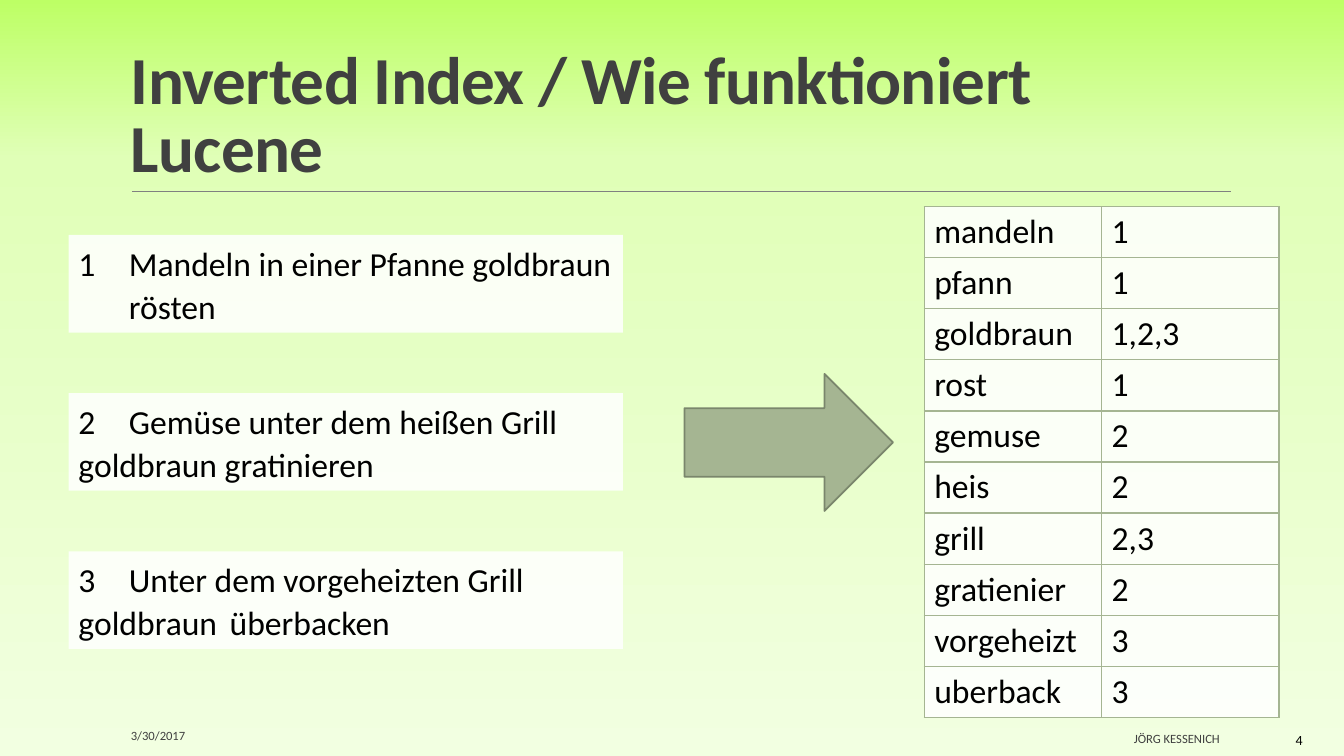
from copy import deepcopy

from lxml.etree import SubElement
from pptx import Presentation
from pptx.dml.color import RGBColor as RGB
from pptx.enum.shapes import MSO_CONNECTOR as CONN, MSO_SHAPE as SHAPE
from pptx.enum.text import MSO_ANCHOR as ANCHOR, MSO_AUTO_SIZE as AUTO, PP_ALIGN as ALIGN
from pptx.oxml.ns import qn
from pptx.util import Pt

THEME = {
    "font": "Calibri",
    "ink": "000000", "gray": "404040", "rule": "808080",
    "panel": "FFFFFF", "sage": "A5B592", "sage_dark": "7A866C",
    "panel_alpha": 86,
    "background": [(0, "F2FFE1"), (0.79, "E0FFB7"), (1, "BDFF65")],
    "title": 48, "body": 24, "footer": 9, "number": 10,
}


def write(tf, text, size, color, bold=False, **paragraph_format):
    tf.word_wrap = True
    p = tf.paragraphs[0]
    for name, value in {"alignment": ALIGN.LEFT, **paragraph_format}.items():
        setattr(p, name, value)
    r = p.add_run()
    r.text = text
    for name, value in {"name": THEME["font"], "size": Pt(size), "bold": bold}.items():
        setattr(r.font, name, value)
    r.font.color.rgb = RGB.from_string(color)
    return p, r


def fill_panel(fill, parent):
    """Fill with the translucent panel colour; parent holds the fill's XML."""
    fill.solid()
    fill.fore_color.rgb = RGB.from_string(THEME["panel"])
    color = parent.find(qn("a:solidFill")).find(qn("a:srgbClr"))
    SubElement(color, qn("a:alpha"), val=str(THEME["panel_alpha"] * 1000))


prs = Presentation()
prs.slide_width, prs.slide_height = Pt(960), Pt(540)
s = prs.slides.add_slide(prs.slide_layouts[6])

# Background
fill = s.background.fill
fill.gradient()
fill.gradient_angle = 90
stop_list = s.background.fill._fill._gradFill.find(qn("a:gsLst"))
stop_list.append(deepcopy(stop_list[-1]))
for stop, (position, color) in zip(fill.gradient_stops, THEME["background"]):
    stop.position = position
    stop.color.rgb = RGB.from_string(color)

# Title and rule
rule = s.shapes.add_connector(CONN.STRAIGHT, Pt(94.3), Pt(136.8), Pt(879), Pt(136.8))
rule.line.color.rgb = RGB.from_string(THEME["rule"])
rule.line.width = Pt(0.5)
SubElement(rule._element.spPr, qn("a:effectLst"))

title = s.shapes.add_textbox(Pt(86.4), Pt(22.3), Pt(792), Pt(114.5))
title.text_frame.vertical_anchor = ANCHOR.BOTTOM
p, r = write(title.text_frame, "Inverted Index / Wie funktioniert Lucene",
             THEME["title"], THEME["gray"], bold=True, line_spacing=0.85)
r.font._element.set("spc", "-50")

# Inverted index table
index = [
    ("mandeln", "1"), ("pfann", "1"), ("goldbraun", "1,2,3"), ("rost", "1"),
    ("gemuse", "2"), ("heis", "2"), ("grill", "2,3"), ("gratienier", "2"),
    ("vorgeheizt", "3"), ("uberback", "3"),
]
table = s.shapes.add_table(len(index), 2, Pt(660.2), Pt(147.6), Pt(253.4), Pt(365)).table
table.first_row = table.horz_banding = False
for column in table.columns:
    column.width = Pt(126.7)
for row, entry in zip(table.rows, index):
    row.height = Pt(36.5)
    for cell, text in zip(row.cells, entry):
        write(cell.text_frame, text, THEME["body"], THEME["ink"])
        tcPr = cell._tc.get_or_add_tcPr()
        for side in ("a:lnL", "a:lnR", "a:lnT", "a:lnB"):
            border = SubElement(tcPr, qn(side), w=str(Pt(1)))
            SubElement(SubElement(border, qn("a:solidFill")), qn("a:srgbClr"), val=THEME["sage"])
        fill_panel(cell.fill, tcPr)

# Footer
footer = [
    ("3/30/2017", 86.4, 512.6, 71.3, 25.2, "footer", "gray", ALIGN.LEFT, ANCHOR.MIDDLE),
    ("JÖRG KESSENICH", 760.3, 517.7, 118.1, 20.2, "footer", "gray", ALIGN.RIGHT, ANCHOR.MIDDLE),
    ("4", 887.8, 519.1, 49.7, 20.2, "number", "ink", ALIGN.RIGHT, ANCHOR.TOP),
]
for text, x, y, w, h, size, color, align, anchor in footer:
    sp = s.shapes.add_textbox(Pt(x), Pt(y), Pt(w), Pt(h))
    sp.text_frame.vertical_anchor = anchor
    write(sp.text_frame, text, THEME[size], THEME[color], alignment=align)

# Documents
documents = [
    "1\tMandeln in einer Pfanne goldbraun \trösten",
    "2\tGemüse unter dem heißen Grill \tgoldbraun gratinieren",
    "3\tUnter dem vorgeheizten Grill \tgoldbraun \tüberbacken",
]
group = s.shapes.add_group_shape()
for i, text in enumerate(documents):
    sp = group.shapes.add_shape(SHAPE.RECTANGLE, Pt(49), Pt(167.8 + 113 * i), Pt(396), Pt(69.8))
    sp.shadow.inherit = False
    sp.line.fill.background()
    fill_panel(sp.fill, sp._element.spPr)
    tf = sp.text_frame
    tf.vertical_anchor = ANCHOR.TOP
    tf.auto_size = AUTO.SHAPE_TO_FIT_TEXT
    p, r = write(tf, text, THEME["body"], THEME["ink"], line_spacing=1.07, space_after=Pt(8))
    pPr = p._p.get_or_add_pPr()
    pPr.set("defTabSz", str(Pt(36)))
    tabs = SubElement(pPr, qn("a:tabLst"))
    for n in range(1, 11):
        SubElement(tabs, qn("a:tab"), pos=str(Pt(36 * n)), algn="l")

# Arrow from documents to index
arrow = s.shapes.add_shape(SHAPE.RIGHT_ARROW, Pt(488.9), Pt(267.1), Pt(149), Pt(97.9))
arrow.shadow.inherit = False
arrow.fill.solid()
arrow.fill.fore_color.rgb = RGB.from_string(THEME["sage"])
arrow.line.color.rgb = RGB.from_string(THEME["sage_dark"])
arrow.line.width = Pt(1.25)

prs.save("out.pptx")
